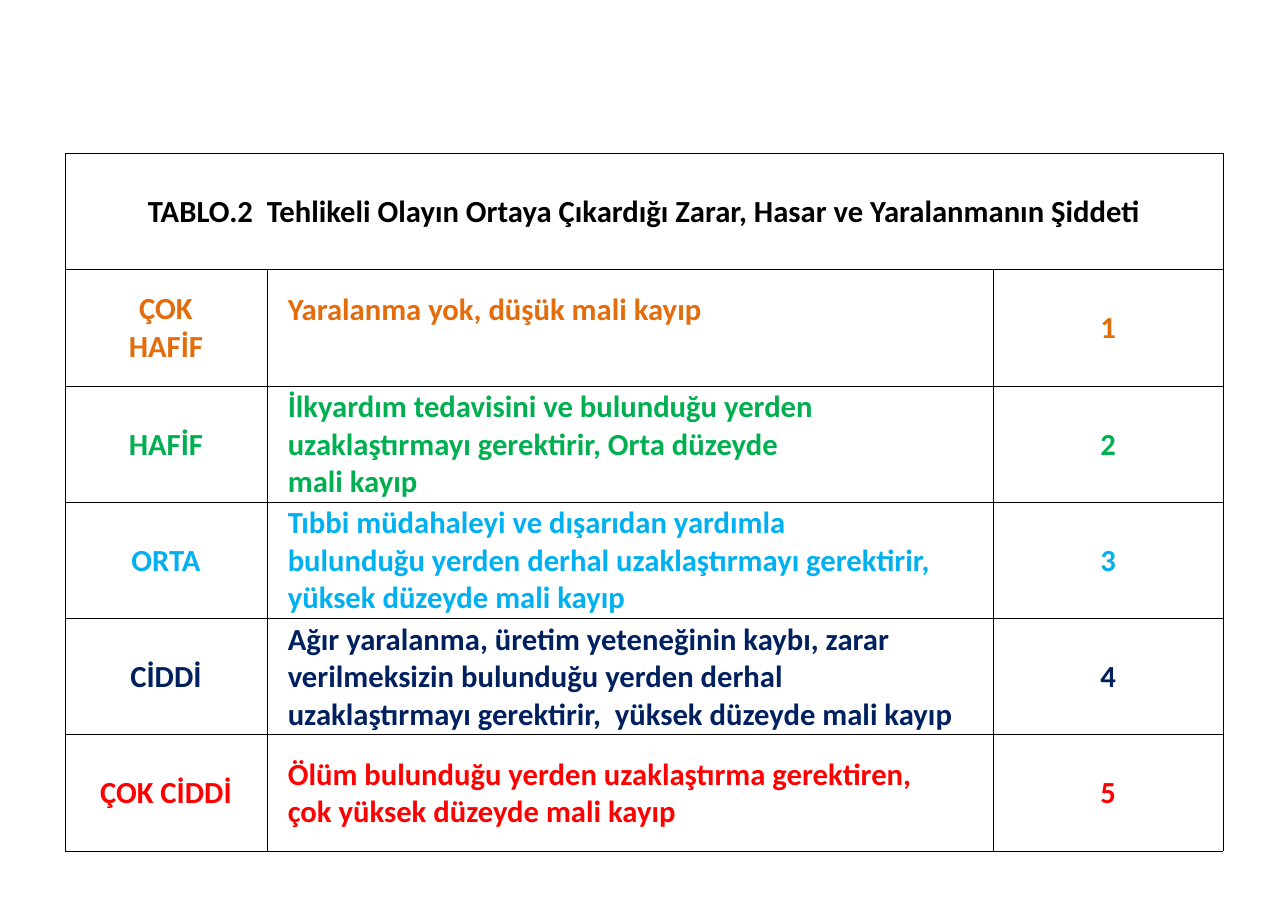
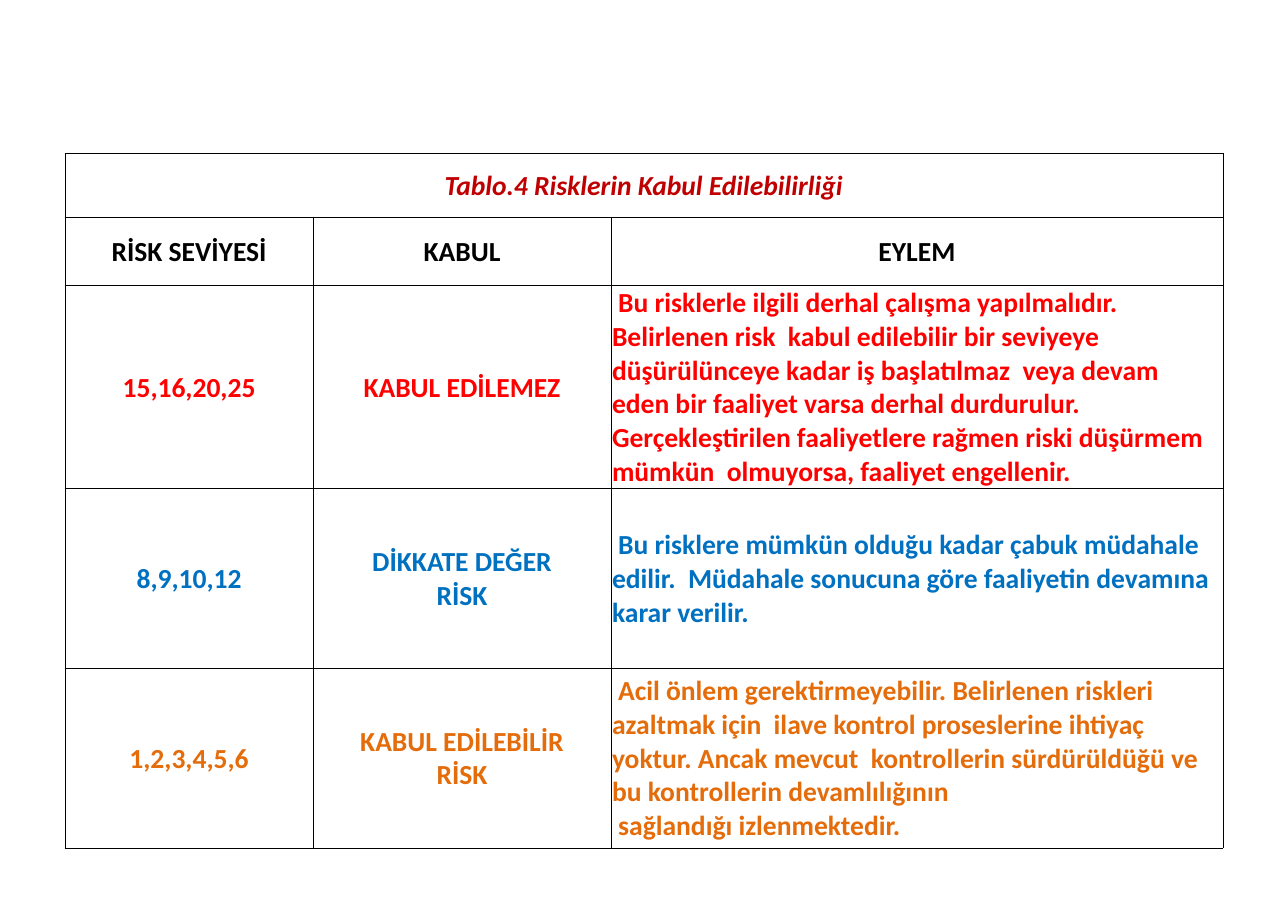
from dataclasses import dataclass

from pptx import Presentation
from pptx.dml.color import RGBColor
from pptx.enum import text
from pptx.oxml import parse_xml
from pptx.oxml import ns
from pptx.util import Inches, Pt


@dataclass(frozen=True)
class Theme:
    font: str = "Calibri"
    big: int = 20
    mid: int = 18
    rule: float = 0.5
    black: str = "000000"
    orange: str = "E46C0A"
    green: str = "00B050"
    sky: str = "00B0F0"
    navy: str = "002060"
    red: str = "FF0000"
    blue: str = "0070C0"
    wine: str = "C00000"


T = Theme()
LEFT, TOP, WIDTH = 0.59, 1.39, 10.5
PAD, INDENT, LINE = 0.01, 0.19, 0.34

HARM = [
    ("ÇOK\nHAFİF", "Yaralanma yok, düşük mali kayıp", T.orange),
    ("HAFİF", "İlkyardım tedavisini ve bulunduğu yerden\n"
     "uzaklaştırmayı gerektirir, Orta düzeyde\nmali kayıp", T.green),
    ("ORTA", "Tıbbi müdahaleyi ve dışarıdan yardımla\n"
     "bulunduğu yerden derhal uzaklaştırmayı gerektirir,\n"
     "yüksek düzeyde mali kayıp", T.sky),
    ("CİDDİ", "Ağır yaralanma, üretim yeteneğinin kaybı, zarar \n"
     "verilmeksizin bulunduğu yerden derhal \n"
     "uzaklaştırmayı gerektirir,  yüksek düzeyde mali kayıp", T.navy),
    ("ÇOK CİDDİ", "Ölüm bulunduğu yerden uzaklaştırma gerektiren, \n"
     "çok yüksek düzeyde mali kayıp", T.red),
]

RISK = [
    ("15,16,20,25", "KABUL EDİLEMEZ",
     " Bu risklerle ilgili derhal çalışma yapılmalıdır. Belirlenen risk  "
     "kabul edilebilir bir seviyeye düşürülünceye kadar iş başlatılmaz  veya "
     "devam eden bir faaliyet varsa derhal durdurulur. Gerçekleştirilen "
     "faaliyetlere rağmen riski düşürmem mümkün  olmuyorsa, faaliyet "
     "engellenir.", T.red),
    ("8,9,10,12", "DİKKATE DEĞER\nRİSK",
     " Bu risklere mümkün olduğu kadar çabuk müdahale edilir.  Müdahale "
     "sonucuna göre faaliyetin devamına karar verilir.", T.blue),
    ("1,2,3,4,5,6", "KABUL EDİLEBİLİR\nRİSK",
     " Acil önlem gerektirmeyebilir. Belirlenen riskleri azaltmak için  "
     "ilave kontrol proseslerine ihtiyaç yoktur. Ancak mevcut  kontrollerin "
     "sürdürüldüğü ve bu kontrollerin devamlılığının\n"
     " sağlandığı izlenmektedir.", T.orange),
]


def frame(cell):
    props = cell._tc.get_or_add_tcPr()
    for side in "LRTB":
        props.append(parse_xml(
            f'<a:ln{side} {ns.nsdecls("a")} w="{Pt(T.rule)}"><a:solidFill>'
            f'<a:srgbClr val="{T.black}"/></a:solidFill></a:ln{side}>'))
    cell.fill.background()


def write(cell, words, size, color, center=True, italic=False, indent=PAD):
    cell.vertical_anchor = text.MSO_ANCHOR.MIDDLE
    cell.margin_left = Inches(indent)
    cell.margin_right = cell.margin_top = Inches(PAD)
    cell.margin_bottom = 0
    para = cell.text_frame.paragraphs[0]
    para.alignment = text.PP_ALIGN.CENTER if center else text.PP_ALIGN.LEFT
    for row, line in enumerate(words.split("\n")):
        if row:
            para.add_line_break()
        run = para.add_run()
        run.text = line
        font = run.font
        font.name, font.size = T.font, Pt(size)
        font.bold, font.italic = True, italic
        font.color.rgb = RGBColor.from_string(color)


def grid(deck, cols, rows):
    slide = deck.slides.add_slide(deck.slide_layouts[6])
    table = slide.shapes.add_table(
        len(rows), len(cols), Inches(LEFT), Inches(TOP),
        Inches(WIDTH), Inches(sum(rows))).table
    table.first_row = table.horz_banding = False
    for col, wide in zip(table.columns, cols):
        col.width = Inches(wide)
    for row, high in zip(table.rows, rows):
        row.height = Inches(high)
    for cell in table.iter_cells():
        frame(cell)
    table.cell(0, 0).merge(table.cell(0, len(cols) - 1))
    return table


def harm(deck):
    table = grid(deck, [1.83, 6.59, 2.08], [6.33 / 6] * 6)
    write(table.cell(0, 0), "TABLO.2  Tehlikeli Olayın Ortaya Çıkardığı Zarar, "
          "Hasar ve Yaralanmanın Şiddeti", T.big, T.black)
    for rank, (name, note, color) in enumerate(HARM, 1):
        write(table.cell(rank, 0), name, T.big, color)
        write(table.cell(rank, 1), note, T.big, color, False, indent=INDENT)
        write(table.cell(rank, 2), str(rank), T.big, color)
    table.cell(1, 1).margin_bottom = Inches(LINE)


def risk(deck):
    table = grid(deck, [2.25, 2.7, 5.55], [0.58, 0.62] + [1.63] * 3)
    write(table.cell(0, 0), "Tablo.4 Risklerin Kabul Edilebilirliği",
          T.mid, T.wine, italic=True)
    for col, head in enumerate(("RİSK SEVİYESİ", "KABUL", "EYLEM")):
        write(table.cell(1, col), head, T.mid, T.black)
    for row, (*words, color) in enumerate(RISK, 2):
        for col, word in enumerate(words):
            write(table.cell(row, col), word, T.mid, color, col < 2)


def main():
    deck = Presentation()
    deck.slide_width, deck.slide_height = Inches(11.68), Inches(8.28)
    harm(deck)
    risk(deck)
    deck.save("out.pptx")


if __name__ == "__main__":
    main()
